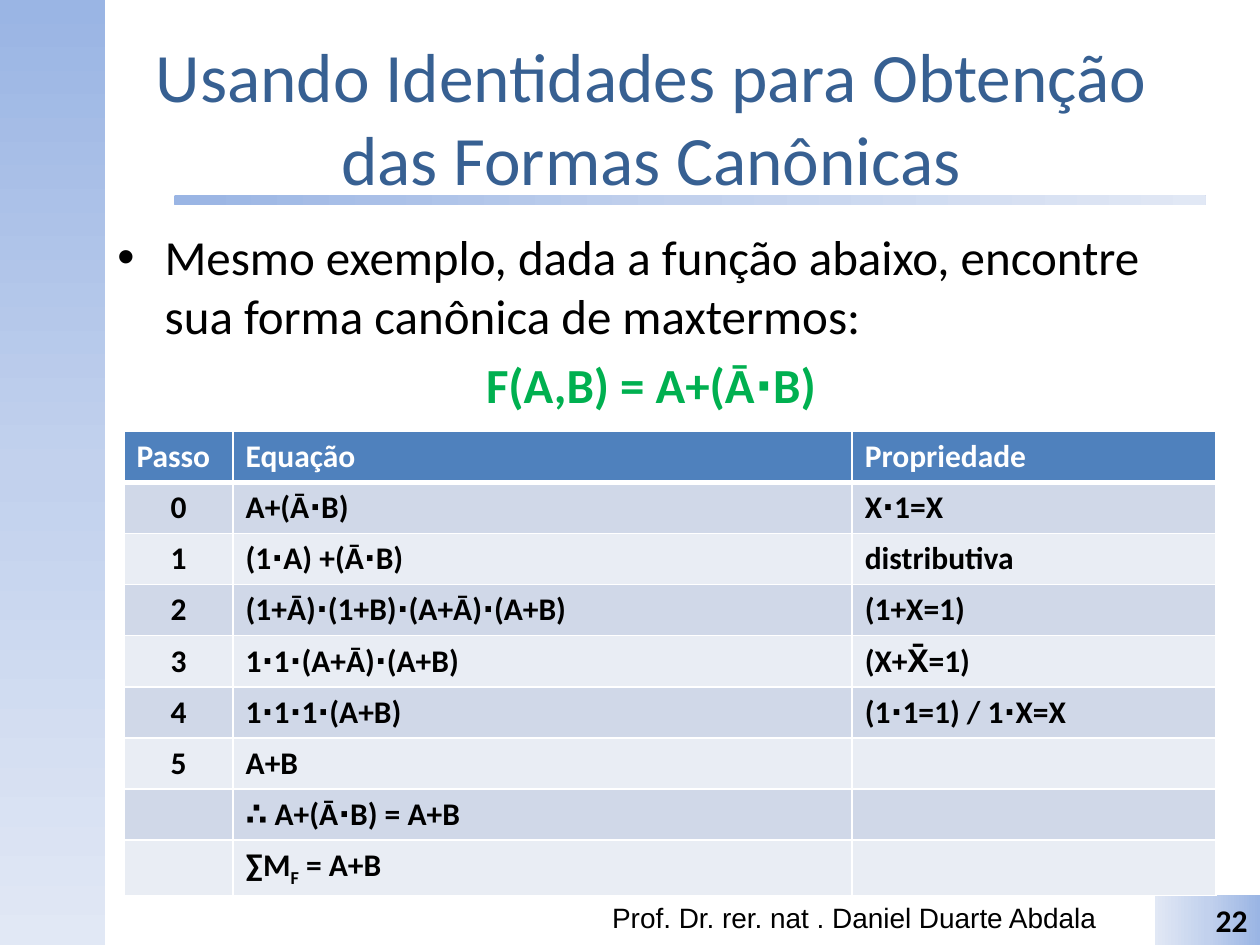
from copy import deepcopy
from dataclasses import dataclass

from pptx import Presentation
from pptx.dml.color import RGBColor
from pptx.enum.shapes import MSO_SHAPE as Shape
from pptx.enum.text import MSO_ANCHOR as Anchor, PP_ALIGN as Align
from pptx.oxml import parse_xml
from pptx.oxml.ns import nsdecls, qn
from pptx.util import Pt

TITLE = "Usando Identidades para Obtenção das Formas Canônicas"
PROMPT = "Mesmo exemplo, dada a função abaixo, encontre sua forma canônica de maxtermos:"
FORMULA = "F(A,B) = A+(Ā⋅B)"
AUTHOR = "Prof. Dr. rer. nat . Daniel Duarte Abdala"
PAGE = "22"
SUBSCRIPT = "_"
STEPS = [
    ("Passo", "Equação", "Propriedade"),
    ("0", "A+(Ā⋅B)", "X⋅1=X"),
    ("1", "(1⋅A) +(Ā⋅B)", "distributiva"),
    ("2", "(1+Ā)⋅(1+B)⋅(A+Ā)⋅(A+B)", "(1+X=1)"),
    ("3", "1⋅1⋅(A+Ā)⋅(A+B)", "(X+X̄=1)"),
    ("4", "1⋅1⋅1⋅(A+B)", "(1⋅1=1) / 1⋅X=X"),
    ("5", "A+B", ""),
    ("", "∴ A+(Ā⋅B) = A+B", ""),
    ("", "∑M_F_ = A+B", ""),
]
COLUMN_WIDTHS = (62.4, 353.8, 207.8)
ROW_HEIGHT = 29.2

SIDEBAR_BOX = (0, 0, 60, 540)
RULE_BOX = (99.4, 111.5, 589.6, 5.8)
TITLE_BOX = (60, 21.6, 624, 90)
BODY_BOX = (60, 126, 624, 356.4)
AUTHOR_BOX = (342.7, 511.2, 301.7, 28.8)
PAGE_BOX = (660, 511.2, 60, 28.8)
TABLE_ORIGIN = (70.8, 246.5)


@dataclass(frozen=True)
class Theme:
    font: str = "Calibri"
    footer_font: str = "Arial"
    title: str = "376092"
    text: str = "000000"
    formula: str = "00B050"
    white: str = "FFFFFF"
    header: str = "4F81BD"
    bands: tuple = ("E9EDF4", "D0D8E8")
    gradient: tuple = ((0, "9AB5E4"), (0.5, "C2D1ED"), (1, "E1E8F5"))
    title_size: float = 39.6
    body_size: float = 28
    table_size: float = 18
    author_size: float = 16


THEME = Theme()


def points(box):
    return [Pt(value) for value in box]


def style(paragraph, size, color=THEME.text, bold=False, align=Align.LEFT, font=THEME.font):
    paragraph.alignment = align
    for run in paragraph.runs:
        run.font.name, run.font.size, run.font.bold = font, Pt(size), bold
        run.font.color.rgb = RGBColor.from_string(color)


def add_gradient(slide, kind, box, angle):
    shape = slide.shapes.add_shape(kind, *points(box))
    shape.shadow.inherit = False
    shape.line.fill.background()
    shape.fill.gradient()
    shape.fill.gradient_angle = angle
    stop_list = shape._element.spPr.find(".//" + qn("a:gsLst"))
    stop_list.append(deepcopy(stop_list[-1]))
    for stop, (position, color) in zip(shape.fill.gradient_stops, THEME.gradient):
        stop.position = position
        stop.color.rgb = RGBColor.from_string(color)
    return shape


def add_text(slide, box, text, anchor=Anchor.TOP):
    text_frame = slide.shapes.add_textbox(*points(box)).text_frame
    text_frame.word_wrap = True
    text_frame.vertical_anchor = anchor
    text_frame.text = text
    return text_frame.paragraphs


def add_body(slide):
    prompt, formula = add_text(slide, BODY_BOX, f"{PROMPT}\n{FORMULA}")
    style(prompt, THEME.body_size)
    style(formula, THEME.body_size, THEME.formula, True, Align.CENTER)
    for paragraph in (prompt, formula):
        paragraph.space_before = Pt(5.6)
        properties = paragraph._p.get_or_add_pPr()
        properties.set("marL", str(Pt(27)))
        properties.set("indent", str(Pt(-27)))
    bullet = prompt._p.get_or_add_pPr()
    bullet.append(parse_xml(f'<a:buFont {nsdecls("a")} typeface="Arial"/>'))
    bullet.append(parse_xml(f'<a:buChar {nsdecls("a")} char="•"/>'))


def set_borders(cell, widths):
    properties = cell._tc.get_or_add_tcPr()
    for side, width in zip("LRTB", widths):
        properties.append(parse_xml(
            f'<a:ln{side} {nsdecls("a")} w="{Pt(width)}"><a:solidFill>'
            f'<a:srgbClr val="{THEME.white}"/></a:solidFill></a:ln{side}>'))


def fill_cell(cell, text, row, column):
    header = row == 0
    set_borders(cell, (1, 1, 3 if row == 1 else 1, 3 if header else 1))
    cell.fill.solid()
    cell.fill.fore_color.rgb = RGBColor.from_string(THEME.header if header else THEME.bands[row % 2])
    paragraph = cell.text_frame.paragraphs[0]
    paragraph.font.size = Pt(THEME.table_size)
    for index, part in enumerate(text.split(SUBSCRIPT) if text else ()):
        run = paragraph.add_run()
        run.text = part
        if index % 2:
            run.font._element.set("baseline", "-25000")
    style(paragraph, THEME.table_size, THEME.white if header else THEME.text, True,
          Align.CENTER if column == 0 and not header else Align.LEFT)


def add_steps(slide):
    size = (sum(COLUMN_WIDTHS), ROW_HEIGHT * len(STEPS))
    table = slide.shapes.add_table(
        len(STEPS), len(COLUMN_WIDTHS), *points(TABLE_ORIGIN + size)).table
    for column, width in zip(table.columns, COLUMN_WIDTHS):
        column.width = Pt(width)
    for row, texts in enumerate(STEPS):
        table.rows[row].height = Pt(ROW_HEIGHT)
        for column, text in enumerate(texts):
            fill_cell(table.cell(row, column), text, row, column)


def main():
    """Build the slide on canonical forms and save it."""
    presentation = Presentation()
    presentation.slide_width, presentation.slide_height = Pt(720), Pt(540)
    slide = presentation.slides.add_slide(presentation.slide_layouts[6])
    add_gradient(slide, Shape.RECTANGLE, SIDEBAR_BOX, 270)
    add_gradient(slide, Shape.ROUNDED_RECTANGLE, RULE_BOX, 0)
    title = add_text(slide, TITLE_BOX, TITLE, Anchor.MIDDLE)[0]
    style(title, THEME.title_size, THEME.title, align=Align.CENTER)
    add_body(slide)
    author = add_text(slide, AUTHOR_BOX, AUTHOR)[0]
    style(author, THEME.author_size, font=THEME.footer_font)
    page = add_gradient(slide, Shape.RECTANGLE, PAGE_BOX, 180).text_frame
    page.text = PAGE
    page.vertical_anchor = Anchor.MIDDLE
    style(page.paragraphs[0], THEME.table_size, bold=True, align=Align.RIGHT)
    add_steps(slide)
    presentation.save("out.pptx")


if __name__ == "__main__":
    main()
